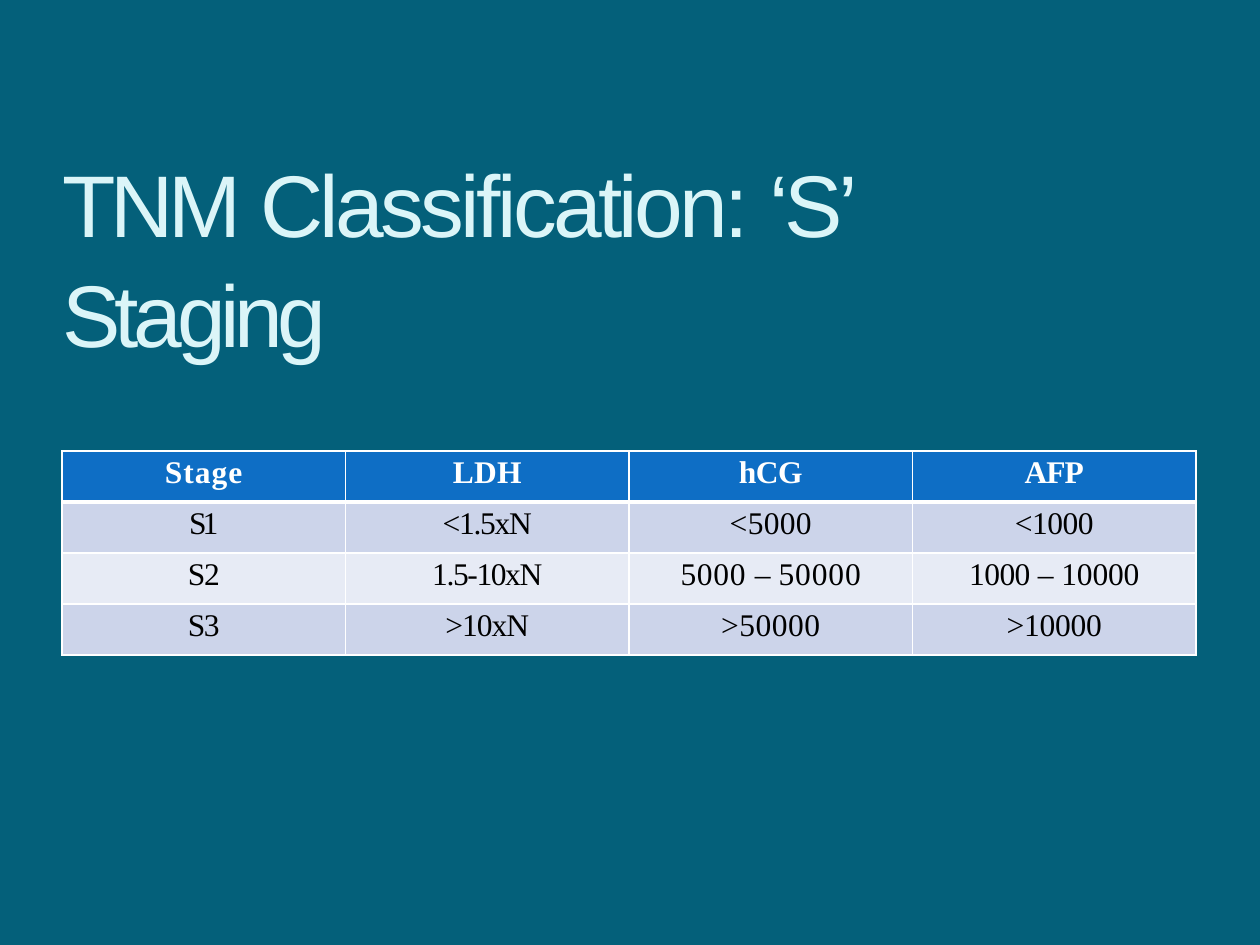
from lxml import etree
from pptx import Presentation
from pptx import util as u
from pptx.dml import color
from pptx.enum import text
from pptx.oxml import ns

PX = 914400 / 126
TITLE = [("TNM ", -3), ("Classification: ", -2.1), ("‘S’ ", -2.6), ("Staging", -3.1)]
ROWS = [
    [[("Stage", 0.6)], [("LDH", 0.1)], [("hCG", -0.3)], [("AFP", -0.6)]],
    [[("S1", -2.2)], [("<1.5xN", -0.7)], [("<5000", 0.2)], [("<1000", -0.3)]],
    [[("S2", -0.7)], [("1.5-10xN", -0.8)],
     [("5000 ", 0.4), ("– ", 0), ("50000", 0.5)],
     [("1000 ", -0.3), ("– ", 0), ("10000", -0.1)]],
    [[("S3", -0.9)], [(">10xN", -0.6)], [(">50000", 0.3)], [(">10000", -0.1)]],
]
ROW_FILLS = ["0E6EC5", "CCD4EA", "E7EBF5", "CCD4EA"]


def px(length):
    """Turn pixels into EMU."""
    return u.Emu(round(length * PX))


def rgb(value):
    """Turn a hex string into a colour."""
    return color.RGBColor.from_string(value)


def set_values(target, values):
    """Set attributes from a dict."""
    for name, value in values.items():
        setattr(target, name, value)


def add_spans(para, spans, font, ink):
    """Write letter-spaced spans into a paragraph."""
    for words, spacing in spans:
        span = para.add_run()
        span.text = words
        set_values(span.font, font)
        span.font.color.rgb = rgb(ink)
        span._r.get_or_add_rPr().set("spc", str(round(spacing * 100)))


def add_border(cell, side, points):
    """Draw one white side of a cell."""
    line = etree.SubElement(cell._tc.get_or_add_tcPr(), ns.qn(f"a:ln{side}"),
                            w=str(u.Pt(points)))
    fill = etree.SubElement(line, ns.qn("a:solidFill"))
    etree.SubElement(fill, ns.qn("a:srgbClr"), val="FFFFFF")


def place_title(page, left, top, width, height):
    """Place and format the title."""
    box = page.shapes.title
    set_values(box, {"left": px(left), "top": px(top),
                     "width": px(width), "height": px(height)})
    set_values(box.text_frame, {
        "margin_left": 0, "margin_right": 0, "margin_top": px(3), "margin_bottom": 0,
        "word_wrap": True, "vertical_anchor": text.MSO_ANCHOR.TOP,
        "auto_size": text.MSO_AUTO_SIZE.SHAPE_TO_FIT_TEXT})
    para = box.text_frame.paragraphs[0]
    set_values(para, {"alignment": text.PP_ALIGN.LEFT, "line_spacing": 1.05})
    add_spans(para, TITLE, {"name": "Arial", "size": u.Pt(50)}, "DBF5F8")


def place_table(page, left, top, width, height):
    """Place the staging table with equal rows and columns."""
    table = page.shapes.add_table(len(ROWS), len(ROWS[0]), px(left), px(top),
                                  px(width), px(height)).table
    table.horz_banding = False
    for r, row in enumerate(ROWS):
        table.rows[r].height = px(height / len(ROWS))
        for c, spans in enumerate(row):
            cell = table.cell(r, c)
            set_values(cell, {"margin_left": 0, "margin_right": 0,
                              "margin_top": px(4), "margin_bottom": 0})
            borders = {"L": 1, "R": 1, "T": 3 if r == 1 else 1, "B": 3 if r == 0 else 1}
            for side, points in borders.items():
                add_border(cell, side, points)
            cell.fill.solid()
            cell.fill.fore_color.rgb = rgb(ROW_FILLS[r])
            para = cell.text_frame.paragraphs[0]
            set_values(para, {"alignment": text.PP_ALIGN.CENTER})
            font = {"name": "Times New Roman", "size": u.Pt(18), "bold": r == 0}
            add_spans(para, spans, font, "000000" if r else "FFFFFF")


def main():
    """Build and save the deck."""
    deck = Presentation()
    set_values(deck, {"slide_width": px(1260), "slide_height": px(945)})
    page = deck.slides.add_slide(deck.slide_layouts[5])
    page.background.fill.solid()
    page.background.fill.fore_color.rgb = rgb("04607A")
    place_title(page, 62, 142, 1065, 108)
    place_table(page, 62, 451, 1134, 204)
    deck.save("out.pptx")


if __name__ == "__main__":
    main()
